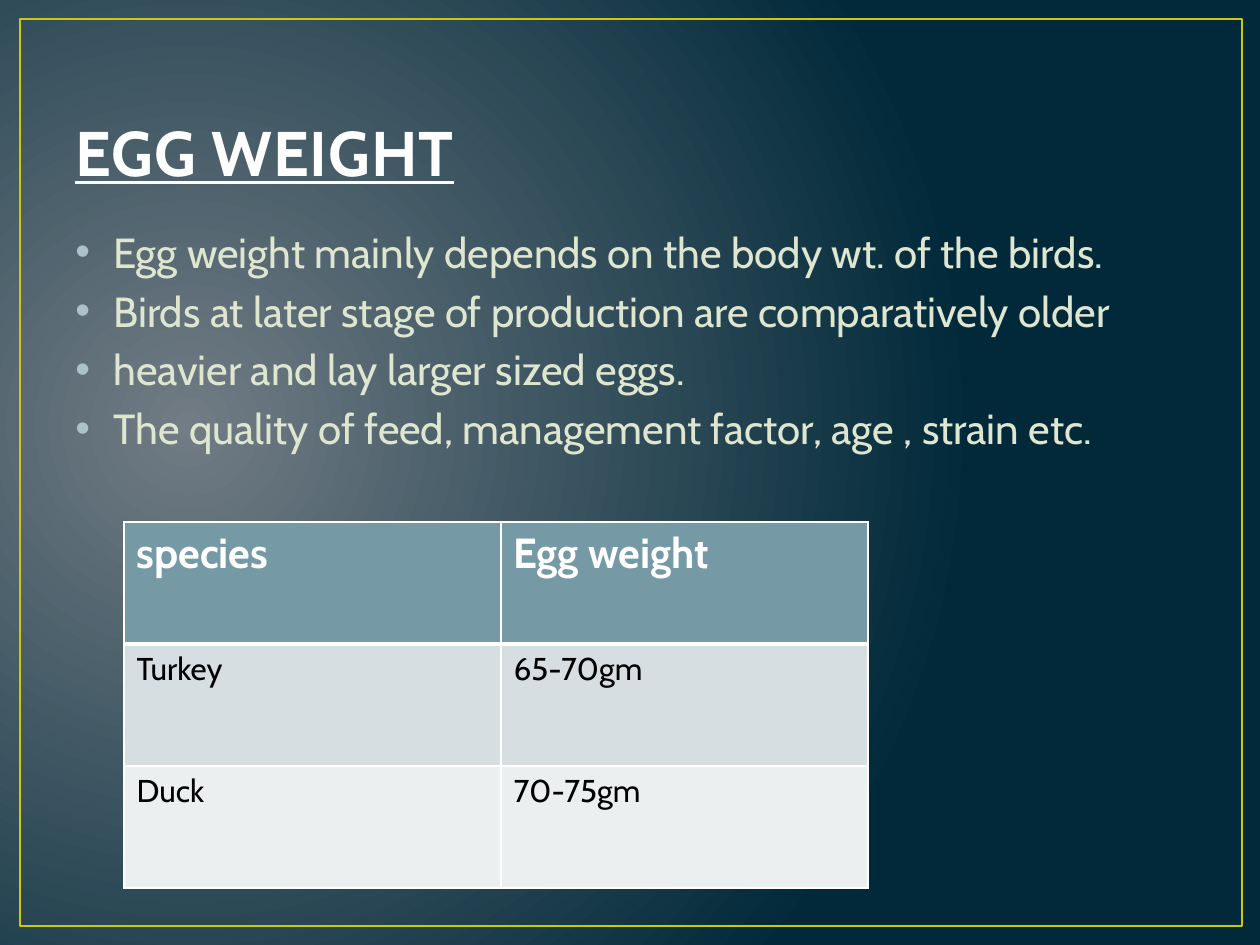
from dataclasses import dataclass

from lxml import etree
from pptx import Presentation
from pptx import util as u
from pptx.dml.color import RGBColor
from pptx.enum import shapes, text
from pptx.oxml import ns


@dataclass(frozen=True)
class Theme:
    font: str = "Cabin"
    glow: str = "717C84"
    night: str = "01293A"
    frame: str = "CFC60D"
    title: str = "FEFEFE"
    body: str = "DFE6D0"
    bullet: str = "ACC2C9"
    white: str = "FFFFFF"
    black: str = "000000"
    header: str = "759AA5"
    bands: tuple = ("D6DEE1", "ECEFF0")
    title_size: int = 36
    body_size: int = 24
    cell_size: int = 18


def px(length):
    return u.Emu(round(length * 914400 / 126))


def color(value):
    return RGBColor.from_string(value)


def add_xml(parent, tag, **attributes):
    values = {name: str(value) for name, value in attributes.items()}
    return etree.SubElement(parent, ns.qn(tag), values)


class SlideBuilder:
    def __init__(self, slide, theme):
        self.slide = slide
        self.theme = theme

    def background(self):
        fill = self.slide.background.fill
        fill.gradient()
        for stop, value in zip(fill.gradient_stops, (self.theme.glow, self.theme.night)):
            stop.color.rgb = color(value)
        linear = self.slide.element.find(".//" + ns.qn("a:lin"))
        gradient = linear.getparent()
        gradient.remove(linear)
        radial = add_xml(gradient, "a:path", path="circle")
        add_xml(radial, "a:fillToRect", l=15000, t=50000, r=85000, b=60000)

    def frame(self, *bounds):
        box = self.slide.shapes.add_shape(
            shapes.MSO_SHAPE.RECTANGLE, *map(px, bounds))
        box.shadow.inherit = False
        box.fill.background()
        box.line.color.rgb = color(self.theme.frame)
        box.line.width = u.Pt(1.5)

    def add_span(self, para, words, value, **formats):
        span = para.add_run()
        span.text = words
        span.font.color.rgb = color(value)
        for name, setting in {"name": self.theme.font, **formats}.items():
            setattr(span.font, name, setting)
        return span

    def text_frame(self, bounds, anchor):
        frame = self.slide.shapes.add_textbox(*map(px, bounds)).text_frame
        frame.word_wrap = True
        frame.vertical_anchor = anchor
        return frame

    def title(self, words, *bounds):
        frame = self.text_frame(bounds, text.MSO_ANCHOR.BOTTOM)
        span = self.add_span(frame.paragraphs[0], words, self.theme.title,
                             size=u.Pt(self.theme.title_size), bold=True, underline=True)
        span.font._element.set("spc", "50")

    def bullets(self, lines, *bounds):
        frame = self.text_frame(bounds, text.MSO_ANCHOR.TOP)
        indent = px(38)
        for index, line in enumerate(lines):
            para = frame.add_paragraph() if index else frame.paragraphs[0]
            para.space_before = u.Pt(0.2 * self.theme.body_size)
            self.add_span(para, line, self.theme.body, size=u.Pt(self.theme.body_size))
            properties = para._p.get_or_add_pPr()
            properties.set("marL", str(indent))
            properties.set("indent", str(-indent))
            tint = add_xml(properties, "a:buClr")
            add_xml(tint, "a:srgbClr", val=self.theme.bullet)
            add_xml(properties, "a:buFont", typeface="Arial")
            add_xml(properties, "a:buChar", char="•")

    def borders(self, cell, top, bottom):
        properties = cell._tc.get_or_add_tcPr()
        for side, width in {"L": 1, "R": 1, "T": top, "B": bottom}.items():
            line = add_xml(properties, "a:ln" + side, w=u.Pt(width))
            solid = add_xml(line, "a:solidFill")
            add_xml(solid, "a:srgbClr", val=self.theme.white)

    def table(self, rows, left, top, widths, row_height):
        theme = self.theme
        bounds = (left, top, sum(widths), row_height * len(rows))
        grid = self.slide.shapes.add_table(
            len(rows), len(widths), *map(px, bounds)).table
        for column, width in zip(grid.columns, widths):
            column.width = px(width)
        for r, row in enumerate(rows):
            grid.rows[r].height = px(row_height)
            is_header = r == 0
            fill = theme.header if is_header else theme.bands[(r - 1) % 2]
            ink = theme.white if is_header else theme.black
            size = theme.body_size if is_header else theme.cell_size
            for c, words in enumerate(row):
                cell = grid.cell(r, c)
                self.borders(cell, top=3 if r == 1 else 1, bottom=3 if is_header else 1)
                cell.fill.solid()
                cell.fill.fore_color.rgb = color(fill)
                self.add_span(cell.text_frame.paragraphs[0], words, ink,
                              size=u.Pt(size), bold=is_header)


def main():
    deck = Presentation()
    deck.slide_width, deck.slide_height = px(1260), px(945)
    page = SlideBuilder(deck.slides.add_slide(deck.slide_layouts[6]), Theme())

    # Backdrop and border
    page.background()
    page.frame(20, 19, 1222, 907)

    # Heading and key points
    page.title("EGG WEIGHT", 63, 38, 1134, 157)
    page.bullets([
        "Egg weight mainly depends on the body wt. of the birds.",
        "Birds at later stage of production are comparatively older",
        "heavier and lay larger sized eggs.",
        "The quality of feed, management factor, age , strain etc.",
    ], 63, 220, 1134, 624)

    # Egg weight by species
    page.table([
        ("species", "Egg weight"),
        ("Turkey", "65-70gm"),
        ("Duck", "70-75gm"),
    ], left=124, top=522, widths=(377, 367), row_height=122)

    deck.save("out.pptx")


if __name__ == "__main__":
    main()
